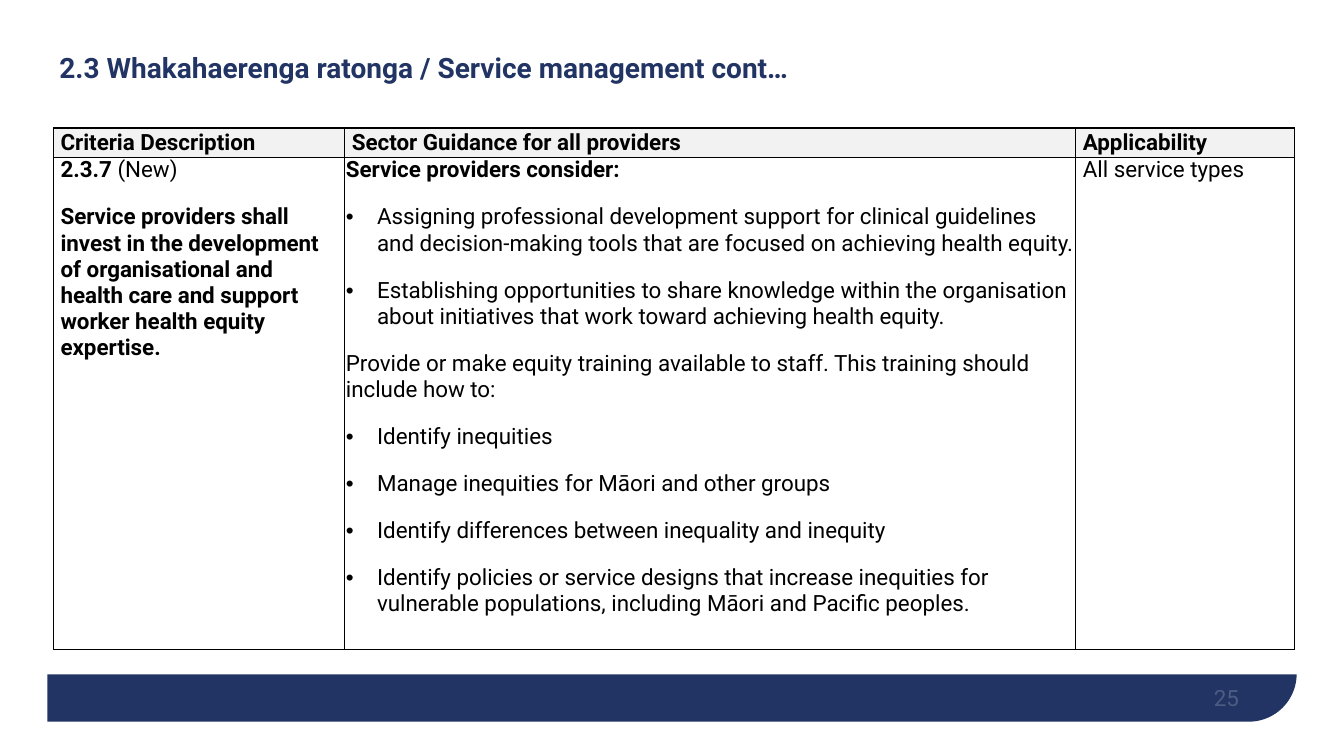
import pptx
import pptx.dml.color
import pptx.enum.shapes
import pptx.enum.text
import pptx.oxml
import pptx.oxml.ns
import pptx.util
from lxml import etree

NAVY, WHITE, BLACK, GREY = "213463", "FFFFFF", "000000", "F2F2F2"
ANCHOR = pptx.enum.text.MSO_ANCHOR
ALIGN = pptx.enum.text.PP_ALIGN
SHAPE = pptx.enum.shapes.MSO_SHAPE

HEADINGS = ["Criteria Description", "Sector Guidance for all providers", "Applicability"]
CRITERION = [
    [("2.3.7 ", True), ("(New)", False)],
    [("Service providers shall invest in the development of organisational and health care "
      "and support worker health equity expertise.", True)],
]
GUIDANCE = [
    [("Service providers consider:", True)],
    "• Assigning professional development support for clinical guidelines and decision-making "
    "tools that are focused on achieving health equity.",
    "• Establishing opportunities to share knowledge within the organisation about initiatives "
    "that work toward achieving health equity.",
    "Provide or make equity training available to staff. This training should include how to:",
    "• Identify inequities",
    "• Manage inequities for Māori and other groups",
    "• Identify differences between inequality and inequity",
    "• Identify policies or service designs that increase inequities for vulnerable populations, "
    "including Māori and Pacific peoples.",
]
APPLICABILITY = ["All service types"]


def colour(value):
    return pptx.dml.color.RGBColor.from_string(value)


def apply(target, values):
    for name, value in values.items():
        setattr(target, name, value)


def element(parent, tag, **attributes):
    return etree.SubElement(parent, pptx.oxml.ns.qn(tag), attributes)


class SlideBuilder:
    """Draws styled elements on one slide, placed in percent of its size."""

    font = "Roboto"

    def __init__(self, deck):
        self.deck = deck
        self.page = deck.slides.add_slide(deck.slide_layouts[6])

    def across(self, share):
        return round(self.deck.slide_width * share / 100)

    def down(self, share):
        return round(self.deck.slide_height * share / 100)

    def place(self, left, top, width, height):
        return self.across(left), self.down(top), self.across(width), self.down(height)

    def panel(self, kind, area, fill):
        panel = self.page.shapes.add_shape(kind, *self.place(*area))
        panel.shadow.inherit = False
        panel.fill.solid()
        panel.fill.fore_color.rgb = colour(fill)
        panel.line.fill.background()
        return panel

    def span(self, para, text, size, tint, bold=False):
        span = para.add_run()
        span.text = text
        apply(span.font, {"name": self.font, "size": pptx.util.Pt(size), "bold": bold})
        span.font.color.rgb = colour(tint)
        return span

    def text(self, area, text, size, tint, frame, para, bold=False):
        box = self.page.shapes.add_textbox(*self.place(*area))
        apply(box.text_frame, {"word_wrap": True, **frame})
        first = box.text_frame.paragraphs[0]
        apply(first, para)
        return self.span(first, text, size, tint, bold)

    def bullet(self, para):
        properties = para._p.get_or_add_pPr()
        indent = pptx.util.Inches(0.31)
        apply_values = {"marL": str(indent), "indent": str(-indent)}
        for name, value in apply_values.items():
            properties.set(name, value)
        element(properties, "a:buFont", typeface="Arial")
        element(properties, "a:buChar", char="•")

    def borders(self, cell):
        properties = cell._tc.get_or_add_tcPr()
        for side in "LRTB":
            line = element(properties, f"a:ln{side}", w=str(pptx.util.Pt(1)))
            element(element(line, "a:solidFill"), "a:srgbClr", val=BLACK)

    def cell(self, cell, paragraphs, inset, fill=None, anchor=ANCHOR.TOP):
        side = pptx.util.Inches(inset)
        apply(cell, {"margin_left": side, "margin_right": side, "margin_top": 0,
                     "margin_bottom": 0, "vertical_anchor": anchor})
        self.borders(cell)
        if fill:
            cell.fill.solid()
            cell.fill.fore_color.rgb = colour(fill)
        else:
            cell.fill.background()
        frame = cell.text_frame
        for index, content in enumerate(paragraphs):
            para = frame.add_paragraph() if index else frame.paragraphs[0]
            apply(para, {"space_before": pptx.util.Pt(6 if index else 0),
                         "space_after": pptx.util.Pt(9)})
            if isinstance(content, str):
                if content.startswith("• "):
                    self.bullet(para)
                content = [(content.removeprefix("• "), False)]
            for text, bold in content:
                self.span(para, text, 16, BLACK, bold)

    def table(self, left, top, widths, heights):
        area = self.place(left, top, sum(widths), sum(heights))
        table = self.page.shapes.add_table(len(heights), len(widths), *area).table
        apply(table, {"first_row": False, "horz_banding": False})
        for column, width in zip(table.columns, widths):
            column.width = self.across(width)
        for row, height in zip(table.rows, heights):
            row.height = self.down(height)
        return table


def main():
    deck = pptx.Presentation()
    apply(deck, {"slide_width": pptx.util.Inches(13.33), "slide_height": pptx.util.Inches(7.5)})
    builder = SlideBuilder(deck)

    band = builder.panel(SHAPE.ROUND_1_RECTANGLE, (3.53, 4.93, 92.95, 90.53), NAVY)
    band.adjustments[0] = 0.07
    band.rotation = 180
    band._element.spPr.xfrm.set("flipH", "1")
    builder.panel(SHAPE.RECTANGLE, (0, 0, 100, 89.2), WHITE)

    margins = dict.fromkeys(["margin_left", "margin_top", "margin_right", "margin_bottom"], 0)
    number = builder.text((69.69, 88.67, 22.5, 5.33), "25", 16, WHITE,
                          {"vertical_anchor": ANCHOR.BOTTOM, **margins},
                          {"alignment": ALIGN.RIGHT})
    tint = number._r.find(".//" + pptx.oxml.ns.qn("a:srgbClr"))
    element(tint, "a:alpha", val="20000")

    builder.text((3.68, 1.33, 90.17, 15.6),
                 "2.3 Whakahaerenga ratonga / Service management cont…", 20, NAVY,
                 {"vertical_anchor": ANCHOR.MIDDLE}, {"line_spacing": 0.9}, True)

    table = builder.table(3.98, 16.93, [21.68, 54.39, 16.28], [3.87, 65.07])
    for column, heading in enumerate(HEADINGS):
        builder.cell(table.cell(0, column), [[(heading, True)]], 0.07, GREY, ANCHOR.MIDDLE)
    bodies = [(CRITERION, 0.07), (GUIDANCE, 0.01), (APPLICABILITY, 0.07)]
    for column, (paragraphs, inset) in enumerate(bodies):
        builder.cell(table.cell(1, column), paragraphs, inset)

    deck.save("out.pptx")


if __name__ == "__main__":
    main()
